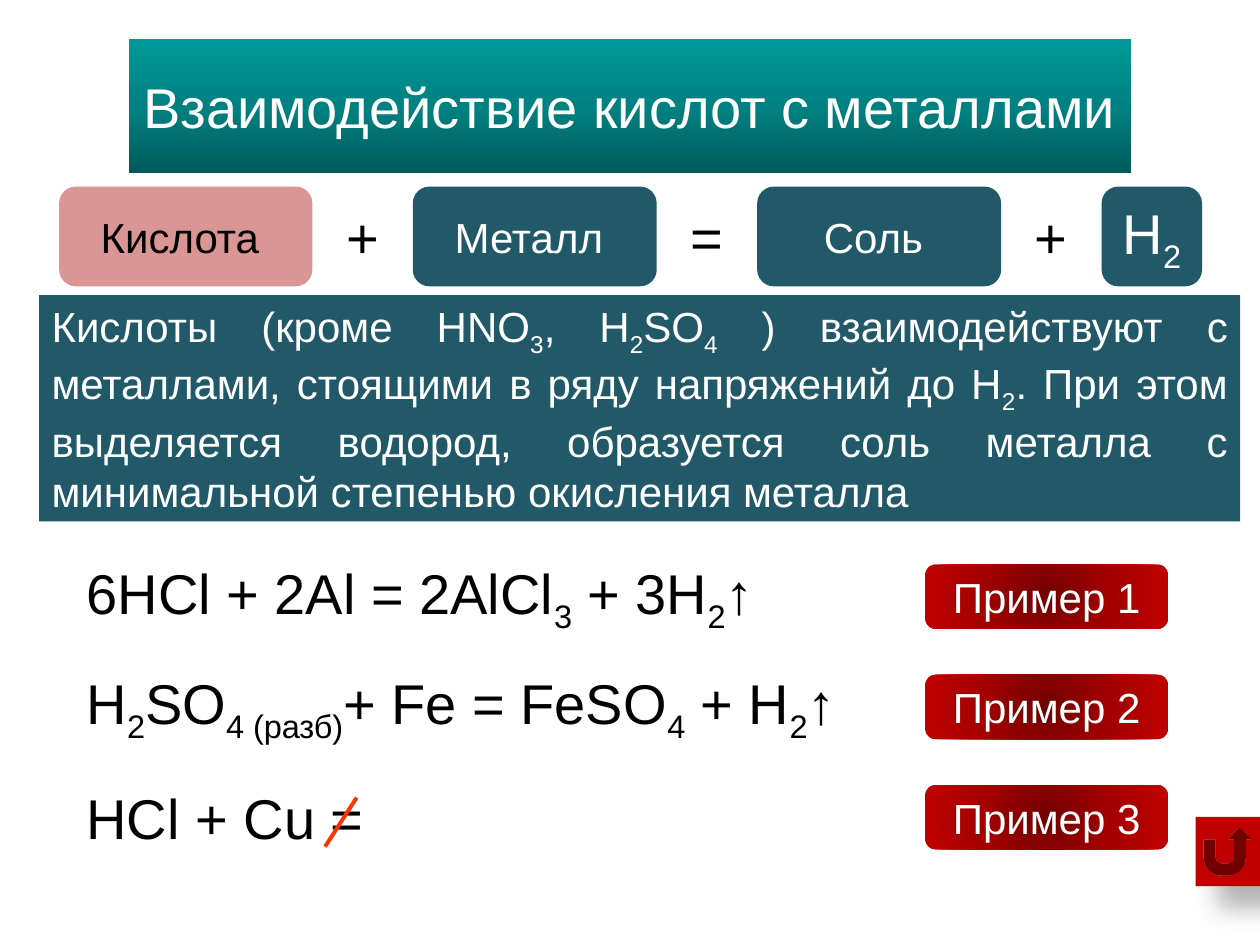
from lxml import etree
from pptx import Presentation
from pptx.dml.color import RGBColor
from pptx.enum.shapes import MSO_CONNECTOR, MSO_SHAPE
from pptx.enum.text import MSO_ANCHOR, MSO_AUTO_SIZE, PP_ALIGN
from pptx.oxml import parse_xml
from pptx.oxml.ns import nsdecls, qn
from pptx.util import Pt

WHITE = RGBColor(0xFF, 0xFF, 0xFF)
BLACK = RGBColor(0, 0, 0)
TEAL = RGBColor(0x21, 0x59, 0x68)
PINK = RGBColor(0xD9, 0x96, 0x94)
RED = RGBColor(0xC0, 0, 0)
ORANGE = RGBColor(0xFF, 0x33, 0)

TITLE = "Взаимодействие кислот с металлами"
SCHEME = [
    ("Кислота ", 144.7, PINK, BLACK, 24),
    ("+", 57.4, None, BLACK, 32),
    ("Металл ", 139.4, TEAL, WHITE, 24),
    ("=", 57.4, None, BLACK, 32),
    ("Соль ", 139.4, TEAL, WHITE, 24),
    ("+", 57.4, None, BLACK, 32),
    ("H|2|", 57.4, TEAL, WHITE, 32),
]
RULE = (
    "Кислоты (кроме HNO|3|, H|2|SO|4| ) взаимодействуют с металлами, "
    "стоящими в ряду напряжений до H|2|. При этом выделяется водород, "
    "образуется соль металла с минимальной степенью окисления металла"
)
EXAMPLES = [
    ("6HCl + 2Al = 2AlCl|3| + 3H|2|↑", "Пример 1"),
    ("H|2|SO|4 (разб)|+ Fe = FeSO|4| + H|2|↑", "Пример 2"),
    ("HCl + Cu =", "Пример 3"),
]
TITLE_STOPS = [(0, "005B5B"), (50, "008181"), (100, "009999")]
BUTTON_STOPS = [(0, "720000"), (50, "A20000"), (100, "C00000")]
UPWARD = '<a:lin ang="16200000" scaled="0"/>'
RADIAL = '<a:path path="circle"><a:fillToRect l="50000" t="50000" r="50000" b="50000"/></a:path>'
SCHEME_LEFT, SCHEME_TOP, ROW_HEIGHT = 33.8, 106.6, 57
EXAMPLE_TOP, EXAMPLE_STEP, BUTTON_HEIGHT = 312.5, 63, 36.8


def write(shape, markup, size, color, align=PP_ALIGN.CENTER):
    """Fill a shape with text in which bars enclose subscripts."""
    frame = shape.text_frame
    frame.word_wrap = True
    frame.auto_size = MSO_AUTO_SIZE.NONE
    frame.vertical_anchor = MSO_ANCHOR.MIDDLE
    paragraph = frame.paragraphs[0]
    paragraph.alignment = align
    for index, part in enumerate(markup.split("|")):
        if part:
            run = paragraph.add_run()
            run.text = part
            run.font.name = "Arial"
            run.font.size = Pt(size)
            run.font.color.rgb = color
            if index % 2:
                run.font._element.set("baseline", "-25000")


def add_block(slide, kind, left, top, width, height, color=None):
    """Add a shape without outline or shadow."""
    shape = slide.shapes.add_shape(kind, Pt(left), Pt(top), Pt(width), Pt(height))
    shape.shadow.inherit = False
    shape.line.fill.background()
    if color is None:
        shape.fill.background()
    else:
        shape.fill.solid()
        shape.fill.fore_color.rgb = color
    return shape


def set_gradient(shape, stops, direction):
    """Give a shape a gradient fill."""
    shape.fill.background()
    properties = shape._element.spPr
    stop_xml = "".join(
        f'<a:gs pos="{position * 1000}"><a:srgbClr val="{color}"/></a:gs>' for position, color in stops
    )
    gradient = parse_xml(
        f'<a:gradFill {nsdecls("a")} rotWithShape="1"><a:gsLst>{stop_xml}</a:gsLst>{direction}</a:gradFill>'
    )
    properties.replace(properties.find(qn("a:noFill")), gradient)


def add_title(slide):
    """Place the title on its gradient band."""
    title = slide.shapes.title
    title.left, title.top, title.width, title.height = Pt(73.6), Pt(22.4), Pt(572.6), Pt(76.4)
    set_gradient(title, TITLE_STOPS, UPWARD)
    write(title, TITLE, 32, WHITE)


def add_scheme(slide):
    """Lay the word equation out from left to right."""
    left = SCHEME_LEFT
    for text, width, fill, color, size in SCHEME:
        block = add_block(slide, MSO_SHAPE.ROUNDED_RECTANGLE, left, SCHEME_TOP, width, ROW_HEIGHT, fill)
        write(block, text, size, color)
        left += width


def add_examples(slide):
    """Stack the equations with their buttons."""
    for index, (equation, label) in enumerate(EXAMPLES):
        top = EXAMPLE_TOP + index * EXAMPLE_STEP
        row = add_block(slide, MSO_SHAPE.ROUNDED_RECTANGLE, 39.6, top, 481.7, ROW_HEIGHT)
        write(row, equation, 32, BLACK, PP_ALIGN.LEFT)
        button_top = top + (ROW_HEIGHT - BUTTON_HEIGHT) / 2
        button = add_block(slide, MSO_SHAPE.ROUNDED_RECTANGLE, 528.6, button_top, 139, BUTTON_HEIGHT)
        set_gradient(button, BUTTON_STOPS, RADIAL)
        write(button, label, 24, WHITE)


def add_strike(slide):
    """Cross out the equals sign of the last equation."""
    strike = slide.shapes.add_connector(MSO_CONNECTOR.STRAIGHT, Pt(185.8), Pt(483.8), Pt(203.8), Pt(455.8))
    strike.line.color.rgb = ORANGE
    strike.line.width = Pt(2.25)
    etree.SubElement(strike._element.spPr, qn("a:effectLst"))


def add_return_button(slide):
    """Add the return button with its soft shadow."""
    button = add_block(slide, MSO_SHAPE.ACTION_BUTTON_RETURN, 683.2, 466.8, 36.8, 39.6, RED)
    button._element.spPr.find(qn("a:effectLst")).append(parse_xml(
        f'<a:outerShdw {nsdecls("a")} blurRad="{Pt(15)}" dist="{Pt(18)}" dir="2700000" algn="ctr" '
        'rotWithShape="0"><a:srgbClr val="000000"><a:alpha val="30000"/></a:srgbClr></a:outerShdw>'
    ))


def main():
    """Build the slide and save it."""
    presentation = Presentation()
    presentation.slide_width, presentation.slide_height = Pt(720), Pt(540)
    slide = presentation.slides.add_slide(presentation.slide_layouts[5])
    add_title(slide)
    add_scheme(slide)
    rule = add_block(slide, MSO_SHAPE.RECTANGLE, 22.4, 168.6, 686.3, 129.4, TEAL)
    write(rule, RULE, 24, WHITE, PP_ALIGN.JUSTIFY)
    add_examples(slide)
    add_strike(slide)
    add_return_button(slide)
    presentation.save("out.pptx")


if __name__ == "__main__":
    main()
